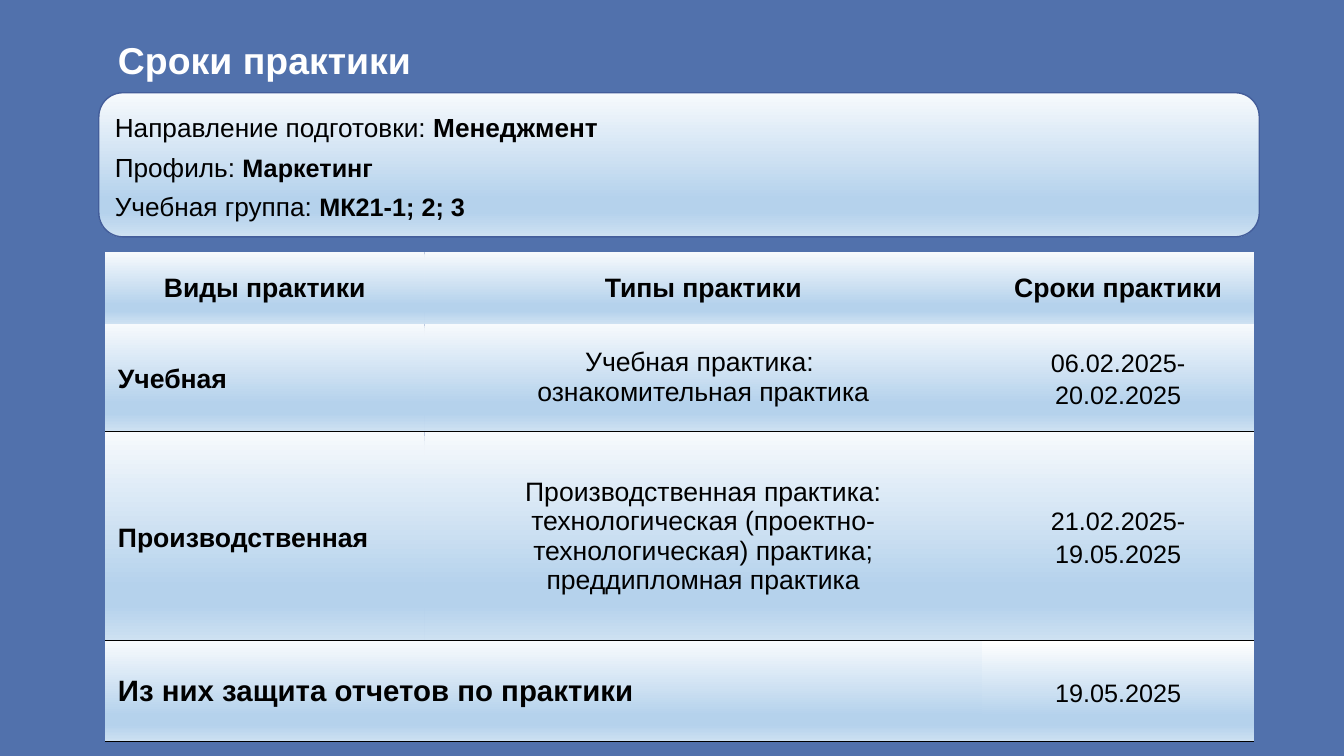
from lxml import etree
from pptx import Presentation
from pptx.dml.color import RGBColor
from pptx.enum.shapes import MSO_SHAPE
from pptx.enum.text import MSO_ANCHOR, PP_ALIGN
from pptx.oxml.ns import qn
from pptx.util import Inches, Pt

LEFT, CENTER = PP_ALIGN.LEFT, PP_ALIGN.CENTER
MIDDLE, TOP = MSO_ANCHOR.MIDDLE, MSO_ANCHOR.TOP
ROUNDED = MSO_SHAPE.ROUNDED_RECTANGLE
FONT = "Arial"
PLAIN_TABLE = "{2D5ABB26-0587-4C30-8999-92F81FD0307C}"
COLORS = {"background": "5171AC", "outline": "435D9A", "title": "FFFFFF", "text": "000000"}
GRADIENT = [(0, "F7FAFD"), (74, "B5D2EC"), (83, "B5D2EC"), (100, "CEE1F2")]
WHITE_GRADIENT = [(0, "FFFFFF")] + GRADIENT[1:]

# A paragraph is a list of runs: (text, size, bold)
TITLE = [[("Сроки практики", 26.7, True)]]
PROGRAMME = [
    [("Направление подготовки: ", 18.7, False), ("Менеджмент", 18.7, True)],
    [("Профиль: ", 18.7, False), ("Маркетинг", 18, True)],
    [("Учебная группа: ", 18.7, False), ("МК21-1; 2; 3", 18, True)],
]
HEADINGS = ["Виды практики", "Типы практики", "Сроки практики"]
PRACTICES = [
    ("Учебная", ["Учебная практика: ", "ознакомительная практика"], "06.02.2025-20.02.2025"),
    ("Производственная",
     ["Производственная практика: технологическая (проектно-технологическая) практика;",
      "преддипломная практика"], "21.02.2025-19.05.2025"),
]
DEFENCE = ("Из них защита отчетов по практики", "19.05.2025")

TABLE_LEFT, TABLE_TOP = 1.04, 2.5
COLUMNS = [3.17, 5.53, 2.7]
ROWS = [0.71, 1.07, 2.08]
DEFENCE_ROW = 1
WIDE, NARROW = (0.13, 0.13), (0.1, 0)  # side and top/bottom insets


def write(frame, paragraphs, align=LEFT, color="text", spacing=1.0):
    for index, runs in enumerate(paragraphs):
        paragraph = frame.add_paragraph() if index else frame.paragraphs[0]
        paragraph.alignment = align
        paragraph.line_spacing = spacing
        for text, size, bold in runs:
            run = paragraph.add_run()
            run.text = text
            run.font.name, run.font.size, run.font.bold = FONT, Pt(size), bold
            run.font.color.rgb = RGBColor.from_string(COLORS[color])


def set_margins(target, insets):
    target.margin_left = target.margin_right = Inches(insets[0])
    target.margin_top = target.margin_bottom = Inches(insets[1])


def add_color(parent, color):
    etree.SubElement(parent, qn("a:srgbClr"), val=color)


def gradient_fill(stops):
    """Return a top-to-bottom gradient element."""
    fill = etree.Element(qn("a:gradFill"), rotWithShape="1")
    stop_list = etree.SubElement(fill, qn("a:gsLst"))
    for percent, color in stops:
        add_color(etree.SubElement(stop_list, qn("a:gs"), pos=str(percent * 1000)), color)
    etree.SubElement(fill, qn("a:lin"), ang="5400000", scaled="0")
    return fill


def fill_cell(cell, paragraphs, insets=WIDE, underline=True, stops=GRADIENT, **text_format):
    cell.vertical_anchor = MIDDLE
    set_margins(cell, insets)
    write(cell.text_frame, paragraphs, **text_format)
    properties = cell._tc.get_or_add_tcPr()
    if underline:
        border = etree.SubElement(properties, qn("a:lnB"), w=str(Pt(1)))
        add_color(etree.SubElement(border, qn("a:solidFill")), COLORS["text"])
    properties.append(gradient_fill(stops))


def add_table(slide, top, columns, rows):
    frame = slide.shapes.add_table(len(rows), len(columns), Inches(TABLE_LEFT), Inches(top),
                                   Inches(sum(columns)), Inches(sum(rows)))
    table = frame.table
    table.first_row = table.horz_banding = False
    table._tbl.tblPr.find(qn("a:tableStyleId")).text = PLAIN_TABLE
    for column, width in zip(table.columns, columns):
        column.width = Inches(width)
    for row, height in zip(table.rows, rows):
        row.height = Inches(height)
    return table


def add_header(slide):
    panel = slide.shapes.add_shape(ROUNDED, Inches(0.98), Inches(0.92), Inches(11.51), Inches(1.43))
    panel.shadow.inherit = False
    panel.line.color.rgb = RGBColor.from_string(COLORS["outline"])
    panel.line.width = Pt(1)
    panel.element.spPr.find(qn("a:prstGeom")).addnext(gradient_fill(GRADIENT))

    title = slide.shapes.title
    title.left, title.top = Inches(TABLE_LEFT), Inches(0.09)
    title.width, title.height = Inches(11.23), Inches(0.89)
    title.text_frame.vertical_anchor = MIDDLE
    set_margins(title.text_frame, WIDE)
    write(title.text_frame, TITLE, color="title", spacing=1.25)

    programme = slide.shapes.add_textbox(Inches(TABLE_LEFT), Inches(0.98), Inches(12.83), Inches(1.28))
    programme.text_frame.word_wrap = True
    programme.text_frame.vertical_anchor = TOP
    write(programme.text_frame, PROGRAMME, spacing=1.25)


def add_schedule(slide):
    schedule = add_table(slide, TABLE_TOP, COLUMNS, ROWS)
    for column, heading in enumerate(HEADINGS):
        fill_cell(schedule.cell(0, column), [[(heading, 19, True)]], underline=False, align=CENTER)
    for row, (kind, types, dates) in enumerate(PRACTICES, start=1):
        fill_cell(schedule.cell(row, 0), [[(kind, 19, True)]], spacing=1.14)
        fill_cell(schedule.cell(row, 1), [[(line, 19, False)] for line in types],
                  insets=NARROW, align=CENTER)
        fill_cell(schedule.cell(row, 2), [[(dates, 18, False)]], align=CENTER, spacing=1.14)

    label, date = DEFENCE
    defence = add_table(slide, TABLE_TOP + sum(ROWS), [sum(COLUMNS[:2]), COLUMNS[2]], [DEFENCE_ROW])
    fill_cell(defence.cell(0, 0), [[(label, 21, True)]])
    fill_cell(defence.cell(0, 1), [[(date, 18, False)]], insets=NARROW, stops=WHITE_GRADIENT,
              align=CENTER, spacing=1.14)


def main():
    presentation = Presentation()
    presentation.slide_width, presentation.slide_height = Inches(13.33), Inches(7.5)
    slide = presentation.slides.add_slide(presentation.slide_layouts[5])
    slide.background.fill.solid()
    slide.background.fill.fore_color.rgb = RGBColor.from_string(COLORS["background"])
    add_header(slide)
    # Title goes above the panel in the stacking order
    slide.shapes[1].element.addnext(slide.shapes.title.element)
    add_schedule(slide)
    presentation.save("out.pptx")


if __name__ == "__main__":
    main()
